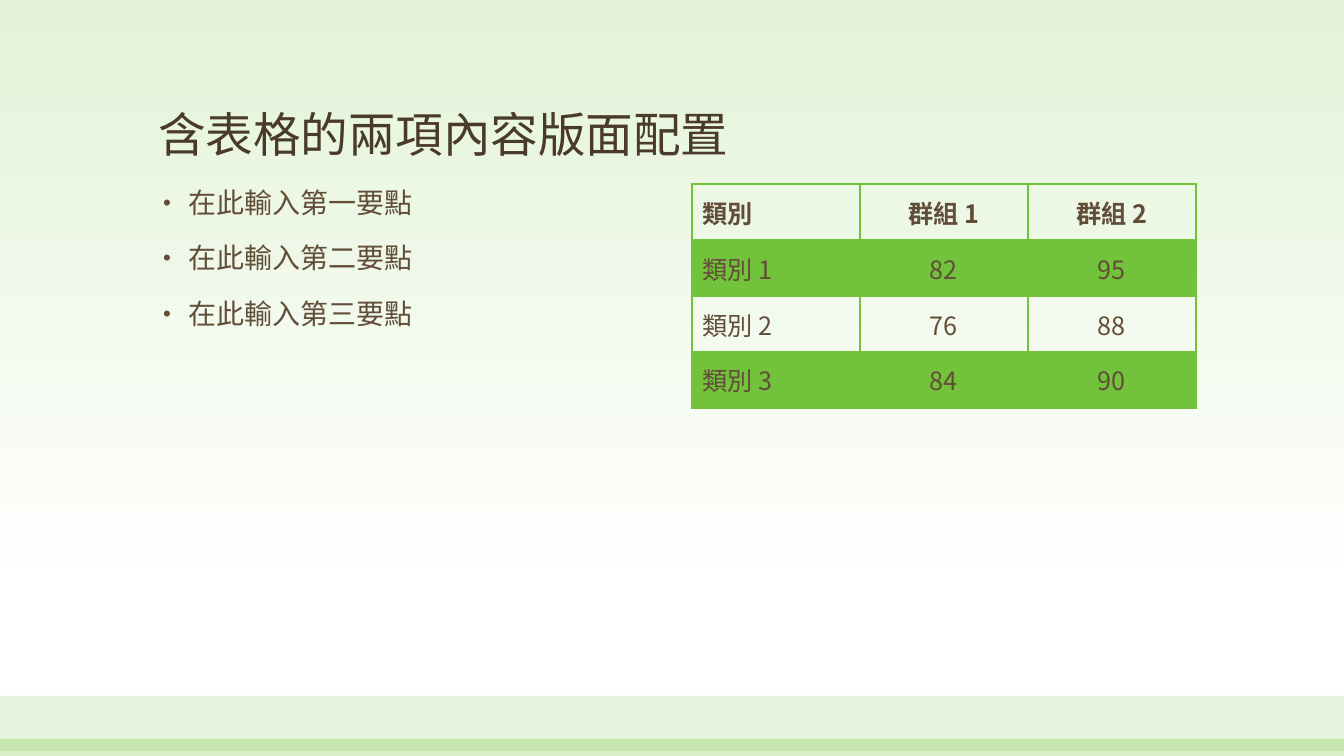
from lxml.etree import SubElement as Sub
from pptx import Presentation
from pptx.dml.color import RGBColor as RGB
from pptx.enum.shapes import MSO_SHAPE as Shape
from pptx.enum.text import MSO_ANCHOR as Anchor, MSO_AUTO_SIZE as Fit, PP_ALIGN as Align
from pptx.oxml.ns import qn
from pptx.util import Pt

PX = 9072
FONT = "Noto Sans CJK TC"
GREEN, BROWN, DARK = "72C23C", "624D38", "4A3A2A"


def paint(fill, color, alpha=100):
    fill.solid()
    fill.fore_color.rgb = RGB.from_string(color)
    if alpha < 100:
        tone = next(fill._xPr.iter(qn("a:srgbClr")))
        Sub(tone, qn("a:alpha"), val=str(alpha * 1000))


def write(para, text, size, color=BROWN, bold=False, align=Align.LEFT, line=None, before=0):
    para.alignment = align
    para.line_spacing = line
    para.space_before = Pt(before)
    run = para.add_run()
    run.text = text
    font = run.font
    font.size, font.bold, font.name = Pt(size), bold, FONT
    paint(font.fill, color)
    Sub(run._r.get_or_add_rPr(), qn("a:ea"), typeface=FONT)


deck = Presentation()
deck.slide_width, deck.slide_height = 1344 * PX, 756 * PX
slide = deck.slides.add_slide(deck.slide_layouts[1])
shapes = slide.shapes
title, body = slide.placeholders

# Background
back = slide.background.fill
back.gradient()
back.gradient_angle = 270
for stop, color, pos in zip(back.gradient_stops, ("E3F3D8", "FFFFFF"), (0, 0.79)):
    stop.color.rgb = RGB.from_string(color)
    stop.position = pos

# Bands along the foot, behind the text
for at, (top, high, alpha) in enumerate([(696, 55, 17), (739, 17, 28)], 2):
    band = shapes.add_shape(Shape.RECTANGLE, 0, top * PX, 1344 * PX, high * PX)
    band.shadow.inherit = False
    band.line.fill.background()
    paint(band.fill, GREEN, alpha)
    shapes._spTree.insert(at, band._element)

# Title
title.left, title.top, title.width, title.height = 148 * PX, 48 * PX, 1048 * PX, 120 * PX
title.text_frame.vertical_anchor = Anchor.BOTTOM
write(title.text_frame.paragraphs[0], "含表格的兩項內容版面配置", 34, DARK, line=0.9)

# Bullet list
body.left, body.top, body.width, body.height = 148 * PX, 184 * PX, 504 * PX, 479 * PX
frame = body.text_frame
frame.auto_size = Fit.TEXT_TO_FIT_SHAPE
for i, point in enumerate(["在此輸入第一要點", "在此輸入第二要點", "在此輸入第三要點"]):
    para = frame.add_paragraph() if i else frame.paragraphs[0]
    write(para, point, 20, line=0.9, before=18 if i else 0)
    props = para._p.get_or_add_pPr()
    props.set("marL", str(30 * PX))
    props.set("indent", str(-25 * PX))
    Sub(props, qn("a:buSzPct"), val="80000")
    Sub(props, qn("a:buChar"), char="•")

# Table
rows = [
    ("類別", "群組 1", "群組 2"),
    ("類別 1", "82", "95"),
    ("類別 2", "76", "88"),
    ("類別 3", "84", "90"),
]
table = shapes.add_table(4, 3, 692 * PX, 184 * PX, 504 * PX, 224 * PX).table
for r, row in enumerate(rows):
    for c, text in enumerate(row):
        cell = table.cell(r, c)
        cell.vertical_anchor = Anchor.MIDDLE
        write(cell.text_frame.paragraphs[0], text, 18, bold=r == 0,
              align=Align.CENTER if c else Align.LEFT)
        props = cell._tc.get_or_add_tcPr()
        for side in "LRTB":
            thick = (r, side) in [(0, "B"), (1, "T")]
            edge = Sub(props, qn("a:ln" + side), w=str(Pt(2 if thick else 1)))
            Sub(Sub(edge, qn("a:solidFill")), qn("a:srgbClr"), val=GREEN)
        if r % 2:
            paint(cell.fill, GREEN, 20)
        else:
            cell.fill.background()

deck.save("out.pptx")
